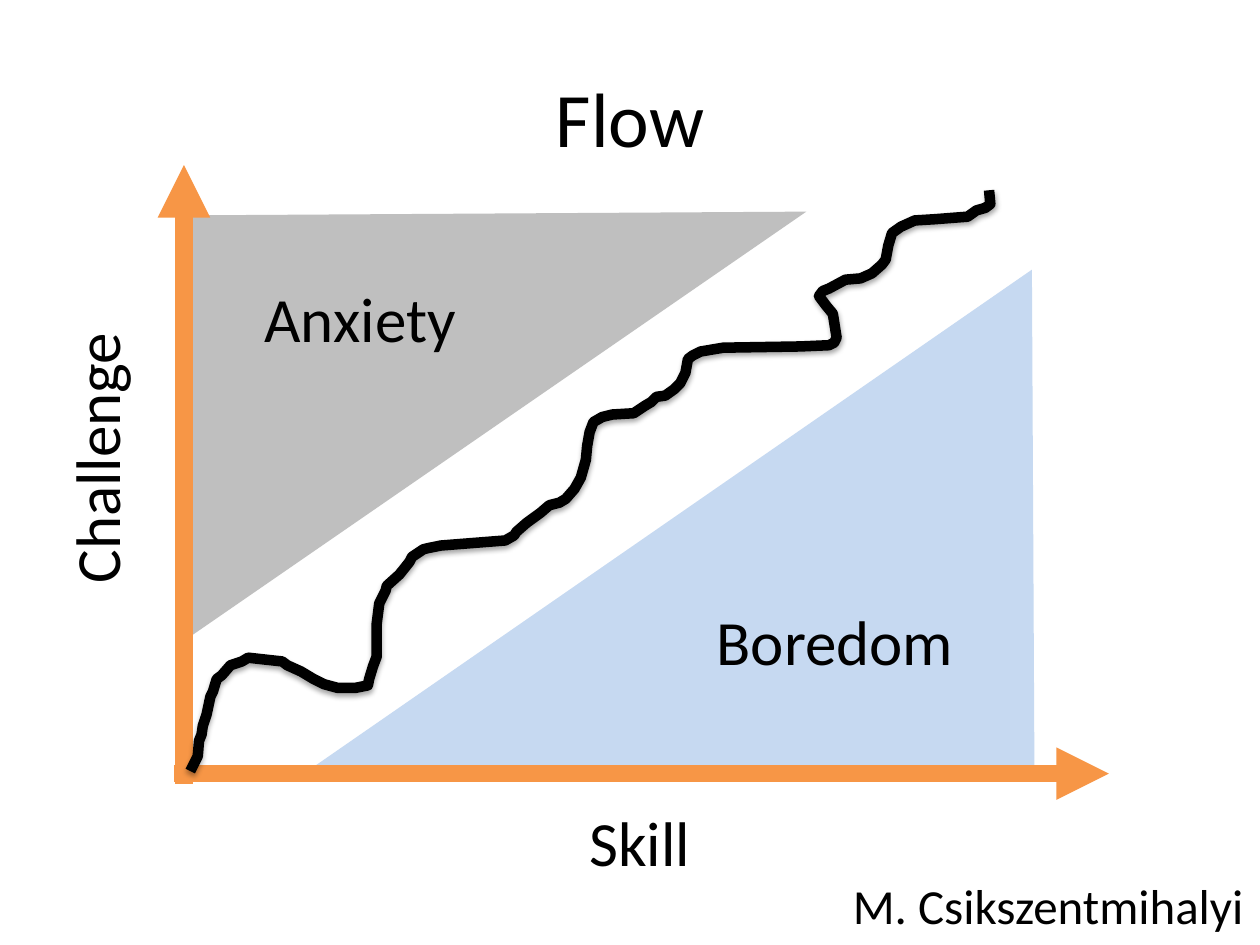
from lxml import etree
from pptx import Presentation
from pptx.dml.color import RGBColor
from pptx.enum.shapes import MSO_CONNECTOR
from pptx.enum.text import MSO_ANCHOR, MSO_AUTO_SIZE, PP_ALIGN
from pptx.oxml import parse_xml
from pptx.oxml.ns import nsdecls, qn
from pptx.util import Inches, Pt

BLACK, ORANGE, GREY, BLUE = "000000", "F79646", "BFBFBF", "C6D9F1"

BOREDOM = [(2.44, 6.12), (8.19, 2.14), (8.21, 6.11)]
ANXIETY = [(1.47, 5.08), (6.4, 1.68), (1.44, 1.71)]
FLOW_PATH = [
    (1.51, 6.12), (1.57, 6), (1.58, 5.88), (1.6, 5.83), (1.61, 5.76), (1.64, 5.67),
    (1.67, 5.53), (1.69, 5.49), (1.72, 5.39), (1.76, 5.36), (1.83, 5.28),
    (1.92, 5.25), (1.97, 5.22), (2.24, 5.25), (2.28, 5.28), (2.39, 5.33),
    (2.49, 5.39), (2.57, 5.43), (2.68, 5.46), (2.82, 5.46), (2.92, 5.44),
    (2.93, 5.39), (2.96, 5.29), (2.99, 5.21), (2.99, 4.95), (3.01, 4.79),
    (3.03, 4.75), (3.06, 4.69), (3.07, 4.65), (3.17, 4.56), (3.21, 4.51),
    (3.25, 4.46), (3.27, 4.42), (3.36, 4.36), (3.4, 4.35), (3.5, 4.33),
    (4.01, 4.29), (4.08, 4.25), (4.1, 4.22), (4.18, 4.15), (4.29, 4.07),
    (4.36, 4.01), (4.44, 3.99), (4.49, 3.96), (4.56, 3.88), (4.61, 3.79),
    (4.65, 3.65), (4.66, 3.54), (4.68, 3.43), (4.71, 3.35), (4.78, 3.31),
    (4.86, 3.29), (5.03, 3.28), (5.12, 3.22), (5.17, 3.19), (5.21, 3.15),
    (5.28, 3.14), (5.35, 3.09), (5.4, 3.04), (5.44, 2.96), (5.46, 2.85),
    (5.5, 2.82), (5.56, 2.79), (5.74, 2.76), (6.35, 2.75), (6.58, 2.74),
    (6.62, 2.72), (6.64, 2.68), (6.61, 2.49), (6.56, 2.43), (6.5, 2.35),
    (6.53, 2.31), (6.58, 2.29), (6.71, 2.22), (6.83, 2.21), (6.92, 2.17),
    (7, 2.1), (7.03, 2.06), (7.05, 1.95), (7.08, 1.85), (7.15, 1.8),
    (7.26, 1.75), (7.42, 1.74), (7.68, 1.72), (7.75, 1.67), (7.82, 1.65),
    (7.86, 1.62), (7.85, 1.51),
]


def rgb(value):
    return RGBColor.from_string(value)


def add_freeform(slide, points, close):
    first, *rest = [(Inches(x), Inches(y)) for x, y in points]
    builder = slide.shapes.build_freeform(*first)
    builder.add_line_segments(rest, close=close)
    s = builder.convert_to_shape()
    s.shadow.inherit = False
    return s


def add_zone(slide, points, color):
    s = add_freeform(slide, points, close=True)
    s.fill.solid()
    s.fill.fore_color.rgb = rgb(color)
    s.line.fill.background()


def add_flow_line(slide, points):
    s = add_freeform(slide, points, close=False)
    s.fill.background()
    s.line.color.rgb = rgb(BLACK)
    s.line.width = Pt(6)
    effects = s._element.spPr.find(qn("a:effectLst"))
    effects.append(parse_xml(
        f'<a:outerShdw {nsdecls("a")} blurRad="{Pt(3.1)}" dist="{Pt(1.8)}" '
        f'dir="5400000" rotWithShape="0"><a:srgbClr val="{BLACK}">'
        '<a:alpha val="35000"/></a:srgbClr></a:outerShdw>'))


def add_axis(slide, x1, y1, x2, y2):
    s = slide.shapes.add_connector(
        MSO_CONNECTOR.STRAIGHT, Inches(x1), Inches(y1), Inches(x2), Inches(y2))
    s.line.color.rgb = rgb(ORANGE)
    s.line.width = Pt(10)
    etree.SubElement(s.line._get_or_add_ln(), qn("a:tailEnd"), type="triangle")
    etree.SubElement(s._element.spPr, qn("a:effectLst"))


def add_text(slide, text, left, top, width, height, size=36, rotation=0):
    s = slide.shapes.add_textbox(Inches(left), Inches(top), Inches(width), Inches(height))
    s.rotation = rotation
    tf = s.text_frame
    tf.text = text
    tf.word_wrap = False
    tf.auto_size = MSO_AUTO_SIZE.SHAPE_TO_FIT_TEXT
    font = tf.paragraphs[0].runs[0].font
    font.name = "Calibri"
    font.size = Pt(size)
    font.color.rgb = rgb(BLACK)
    return tf


def add_title(slide, text):
    tf = add_text(slide, text, 0.5, 0.3, 9, 1.25, size=44)
    tf.word_wrap = True
    tf.auto_size = MSO_AUTO_SIZE.NONE
    tf.vertical_anchor = MSO_ANCHOR.MIDDLE
    tf.paragraphs[0].alignment = PP_ALIGN.CENTER


def main():
    prs = Presentation()
    prs.slide_width, prs.slide_height = Inches(10), Inches(7.5)
    slide = prs.slides.add_slide(prs.slide_layouts[6])

    add_zone(slide, BOREDOM, BLUE)
    add_zone(slide, ANXIETY, GREY)
    add_title(slide, "Flow")
    add_axis(slide, 1.38, 6.14, 8.8, 6.14)
    add_axis(slide, 1.46, 6.22, 1.46, 1.31)
    add_text(slide, "Skill", 4.58, 6.33, 1.01, 0.71)
    add_text(slide, "Challenge", -0.34, 3.27, 2.21, 0.71, rotation=270)
    add_flow_line(slide, FLOW_PATH)
    add_text(slide, "Anxiety", 2, 2.17, 1.73, 0.71)
    add_text(slide, "Boredom", 5.59, 4.73, 2.1, 0.71)
    add_text(slide, "M. Csikszentmihalyi", 6.67, 6.9, 3.33, 0.57, size=28)

    prs.save("out.pptx")


if __name__ == "__main__":
    main()
